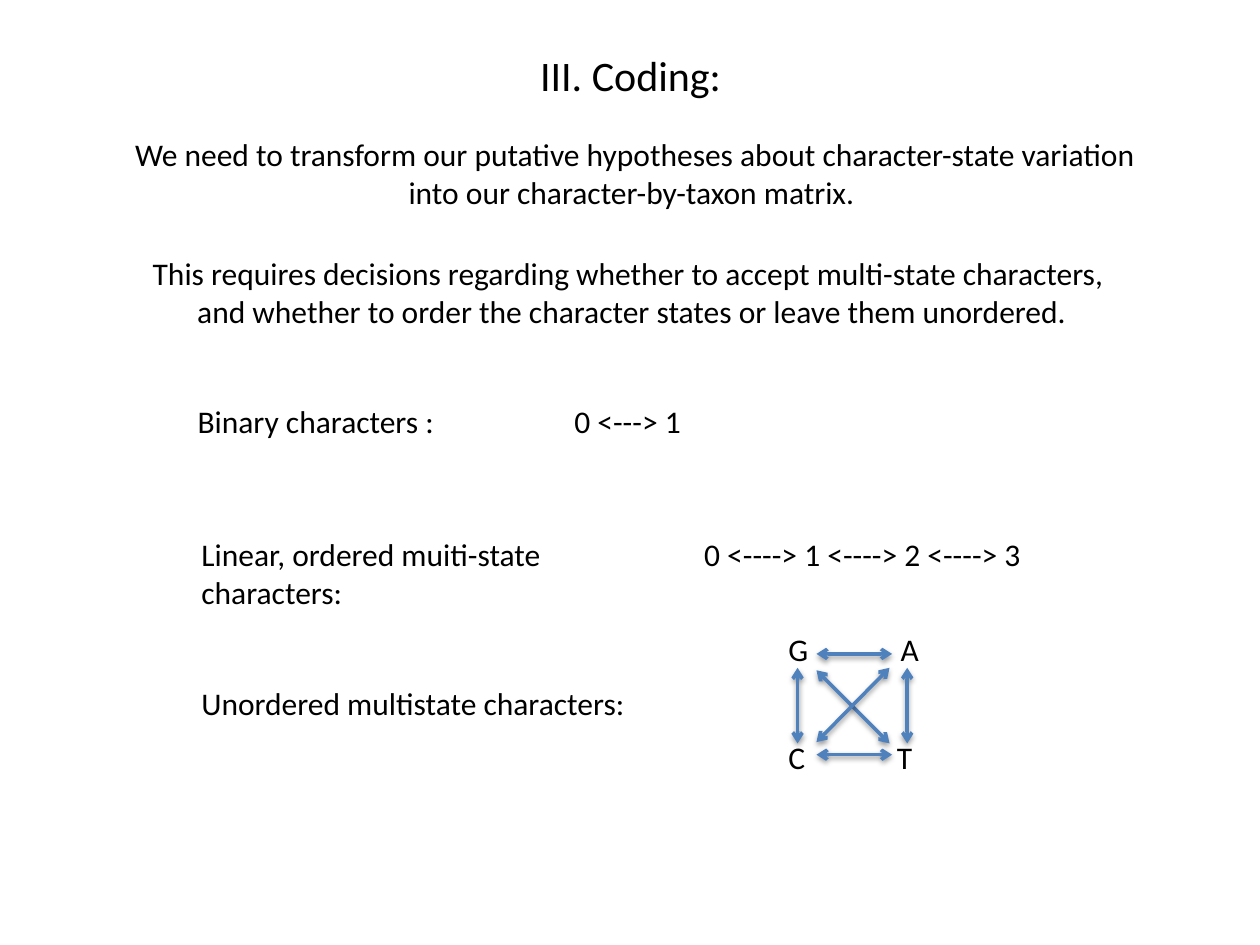
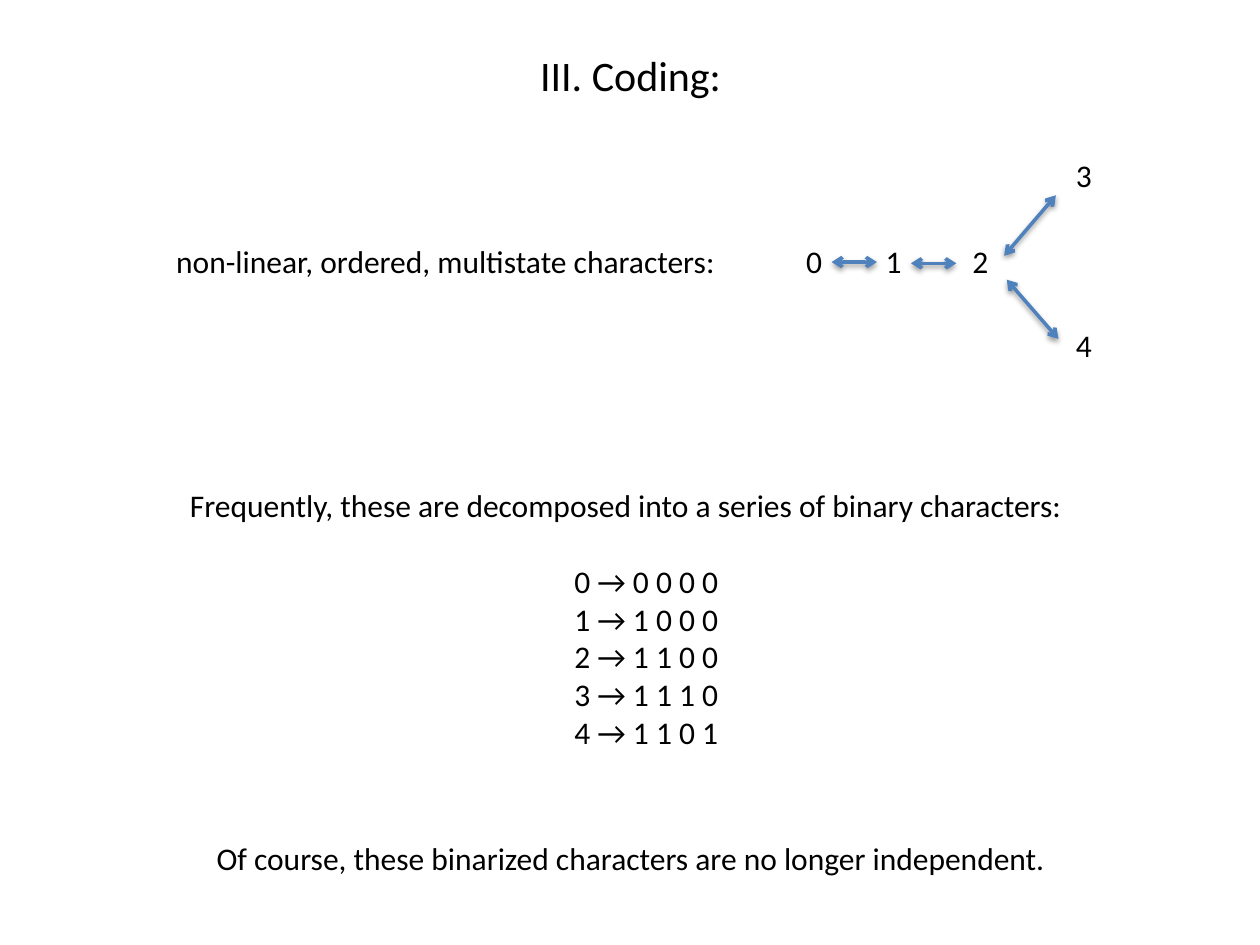
from lxml import etree
from pptx import Presentation
from pptx import util as u
from pptx.dml.color import RGBColor
from pptx.enum import shapes, text
from pptx.oxml import ns

BLACK = RGBColor(0, 0, 0)
BLUE = RGBColor(0x4F, 0x81, 0xBD)
FONT = "Calibri"
LEFT = text.PP_ALIGN.LEFT
MID = text.PP_ALIGN.CENTER
LINE = 0.4


def write(slide, words, x, y, w, h=LINE, size=18, align=LEFT, wrap=False):
    box = slide.shapes.add_textbox(*map(u.Inches, (x, y, w, h)))
    frame = box.text_frame
    frame.word_wrap = wrap
    frame.text = words
    for para in frame.paragraphs:
        para.alignment = align
        para.font.name = FONT
        para.font.size = u.Pt(size)
        para.font.color.rgb = BLACK


def add(node, tag, **attrs):
    return etree.SubElement(node, ns.qn(tag), attrs)


def arrow(slide, *ends):
    link = slide.shapes.add_connector(
        shapes.MSO_CONNECTOR.STRAIGHT, *map(u.Inches, ends))
    link.line.color.rgb = BLUE
    link.line.width = u.Pt(2)
    stroke = link.line._get_or_add_ln()
    for tag in ("a:headEnd", "a:tailEnd"):
        add(stroke, tag, type="arrow")
    glow = add(link._element.spPr, "a:effectLst")
    shade = add(glow, "a:outerShdw", blurRad=str(u.Pt(3.1)), dist=str(u.Pt(1.6)),
                dir="5400000", rotWithShape="0")
    tint = add(shade, "a:srgbClr", val=str(BLACK))
    add(tint, "a:alpha", val="38000")


def graph(slide, nodes, links):
    for name, x, y in nodes:
        write(slide, name, x, y, 0.33)
    for ends in links:
        arrow(slide, *ends)


def start(deck):
    slide = deck.slides.add_slide(deck.slide_layouts[6])
    write(slide, "III. Coding: ", 4.18, 0.34, 1.65, 0.5, size=24, align=MID)
    return slide


def states(deck):
    slide = start(deck)
    write(slide, "We need to transform our putative hypotheses about character-state "
          "variation into our character-by-taxon matrix. ",
          0.75, 1.02, 8.58, 0.71, align=MID, wrap=True)
    write(slide, "This requires decisions regarding whether to accept multi-state "
          "characters, \nand whether to order the character states or leave them "
          "unordered.", 1.08, 1.97, 7.87, 0.71, align=MID)
    write(slide, "Binary characters :", 1.47, 3.14, 2.1)
    write(slide, "0 <---> 1", 4.46, 3.14, 1.09)
    write(slide, "Linear, ordered muiti-state characters:", 1.5, 4.2, 4.05)
    write(slide, "0 <----> 1 <----> 2 <----> 3", 5.49, 4.2, 2.79)
    write(slide, "Unordered multistate characters:", 1.5, 5.38, 3.63)
    graph(slide,
          [("G", 6.16, 4.95), ("A", 7.05, 4.95), ("C", 6.16, 5.81), ("T", 7.02, 5.81)],
          [(6.48, 5.19, 7.08, 5.19), (6.48, 5.99, 7.08, 5.99),
           (6.33, 5.9, 6.33, 5.3), (7.2, 5.9, 7.2, 5.3),
           (6.48, 5.32, 7.06, 5.9), (7.06, 5.3, 6.48, 5.89)])


def binary(deck):
    slide = start(deck)
    write(slide, "non-linear, ordered, multistate characters:", 1.3, 1.87, 4.66)
    graph(slide,
          [("0", 6.3, 1.87), ("1", 6.93, 1.87), ("2", 7.62, 1.87),
           ("3", 8.44, 1.19), ("4", 8.44, 2.54)],
          [(6.6, 2.08, 6.96, 2.08), (7.23, 2.09, 7.59, 2.09),
           (7.97, 2.03, 8.38, 1.55), (7.99, 2.22, 8.4, 2.69)])
    write(slide, "Frequently, these are decomposed into a series of binary characters:",
          1.41, 3.81, 7.23)
    codes = ("0000", "1000", "1100", "1110", "1101")
    rows = [f"{state} → {' '.join(code)}" for state, code in enumerate(codes)]
    write(slide, "\n".join(rows), 4.46, 4.41, 1.4, 1.62)
    write(slide, "Of course, these binarized characters are no longer independent.",
          1.62, 6.61, 6.81)


def main():
    deck = Presentation()
    deck.slide_width = u.Inches(10)
    deck.slide_height = u.Inches(7.5)
    states(deck)
    binary(deck)
    deck.save("out.pptx")


if __name__ == "__main__":
    main()
